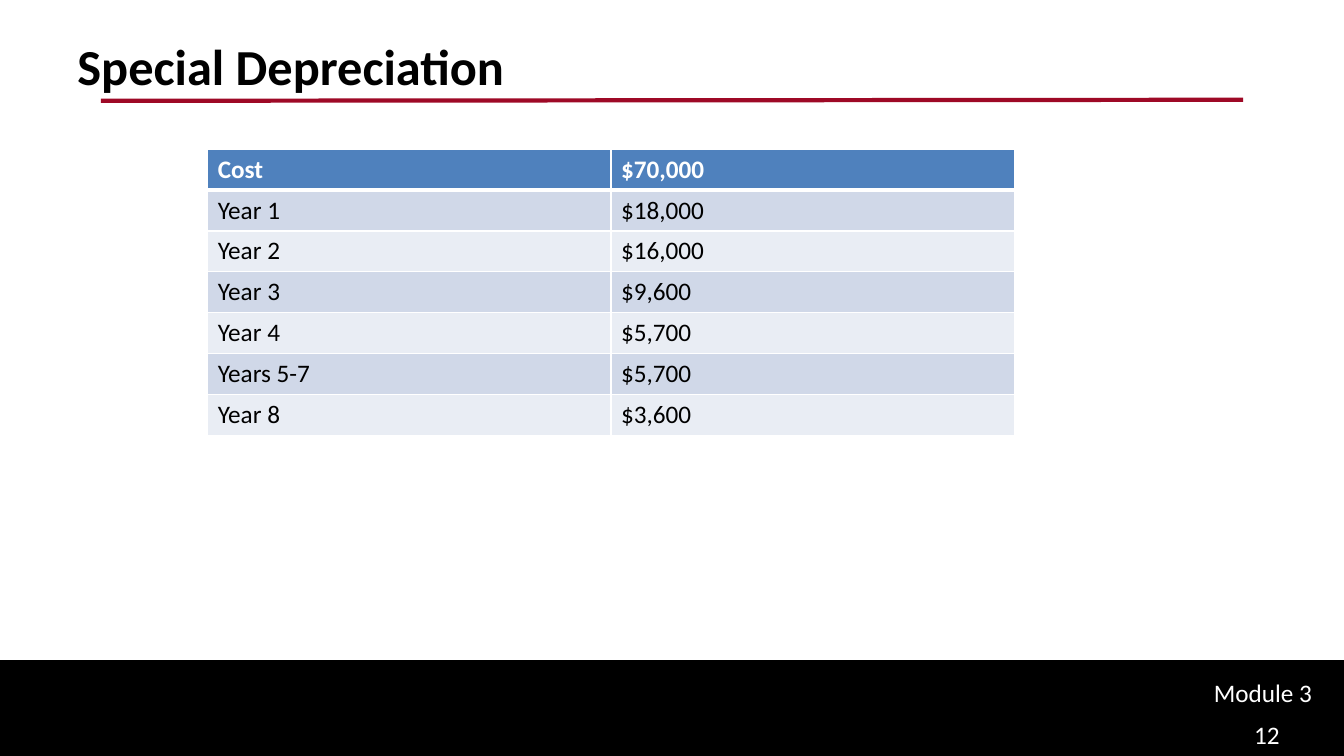
from dataclasses import dataclass

from lxml import etree
from pptx import Presentation
from pptx import util as u
from pptx.dml.color import RGBColor
from pptx.enum import shapes, text
from pptx.oxml.ns import qn

HUES = {
    "black": "000000",
    "white": "FFFFFF",
    "red": "9E0926",
    "head": "4F81BD",
    "odd": "D0D8E8",
    "even": "E9EDF4",
}
FONT = "Calibri"
ROWS = [
    ("Cost", "$70,000"),
    ("Year 1", "$18,000"),
    ("Year 2", "$16,000"),
    ("Year 3", "$9,600"),
    ("Year 4", "$5,700"),
    ("Years 5-7", "$5,700"),
    ("Year 8", "$3,600"),
]


@dataclass
class Label:
    words: str
    left: float
    top: float
    width: float
    height: float
    size: int = 18
    hue: str = "white"
    bold: bool = False
    anchor: text.MSO_ANCHOR = text.MSO_ANCHOR.MIDDLE


LABELS = [
    Label("Special Depreciation", 0.67, 0.3, 12, 1.25, 36, "black", True,
          text.MSO_ANCHOR.TOP),
    Label("Module 3", 11.94, 6.67, 1.32, 0.4),
    Label("12", 12.34, 7.07, 0.91, 0.43),
]


def tint(name: str) -> RGBColor:
    return RGBColor.from_string(HUES[name])


def style(frame, size: int, hue: str, bold: bool) -> None:
    for run in frame.paragraphs[0].runs:
        run.font.name = FONT
        run.font.size = u.Pt(size)
        run.font.bold = bold
        run.font.color.rgb = tint(hue)


def draw_band(slide) -> None:
    band = slide.shapes.add_shape(
        shapes.MSO_SHAPE.RECTANGLE,
        u.Inches(0), u.Inches(6.56), u.Inches(13.33), u.Inches(0.94))
    band.shadow.inherit = False
    band.fill.solid()
    band.fill.fore_color.rgb = tint("black")
    band.line.color.rgb = tint("black")
    band.line.width = u.Pt(2)


def draw_rule(slide) -> None:
    rule = slide.shapes.add_connector(
        shapes.MSO_CONNECTOR.STRAIGHT,
        u.Inches(1), u.Inches(1), u.Inches(12.33), u.Inches(0.99))
    rule.line.color.rgb = tint("red")
    rule.line.width = u.Pt(3)
    etree.SubElement(rule._element.spPr, qn("a:effectLst"))


def draw_label(slide, label: Label) -> None:
    box = slide.shapes.add_textbox(
        u.Inches(label.left), u.Inches(label.top),
        u.Inches(label.width), u.Inches(label.height))
    frame = box.text_frame
    frame.word_wrap = True
    frame.vertical_anchor = label.anchor
    frame.text = label.words
    style(frame, label.size, label.hue, label.bold)


def add_edge(cell, side: str, width: int) -> None:
    props = cell._tc.get_or_add_tcPr()
    edge = etree.SubElement(props, qn(f"a:ln{side}"), w=str(u.Pt(width)))
    fill = etree.SubElement(edge, qn("a:solidFill"))
    etree.SubElement(fill, qn("a:srgbClr"), val=HUES["white"])


def draw_table(slide) -> None:
    table = slide.shapes.add_table(
        len(ROWS), 2, u.Inches(2.06), u.Inches(1.48),
        u.Inches(8), u.Inches(2.84)).table
    for i, row in enumerate(ROWS):
        head = i == 0
        fill = "head" if head else "odd" if i % 2 else "even"
        edges = {"L": 1, "R": 1, "T": 3 if i == 1 else 1, "B": 3 if head else 1}
        for j, words in enumerate(row):
            cell = table.cell(i, j)
            cell.text_frame.text = words
            style(cell.text_frame, 18, "white" if head else "black", head)
            for side, width in edges.items():
                add_edge(cell, side, width)
            cell.fill.solid()
            cell.fill.fore_color.rgb = tint(fill)


def main() -> None:
    deck = Presentation()
    deck.slide_width = u.Inches(13.33)
    deck.slide_height = u.Inches(7.5)
    slide = deck.slides.add_slide(deck.slide_layouts[6])
    draw_band(slide)
    draw_rule(slide)
    draw_table(slide)
    for label in LABELS:
        draw_label(slide, label)
    deck.save("out.pptx")


if __name__ == "__main__":
    main()
